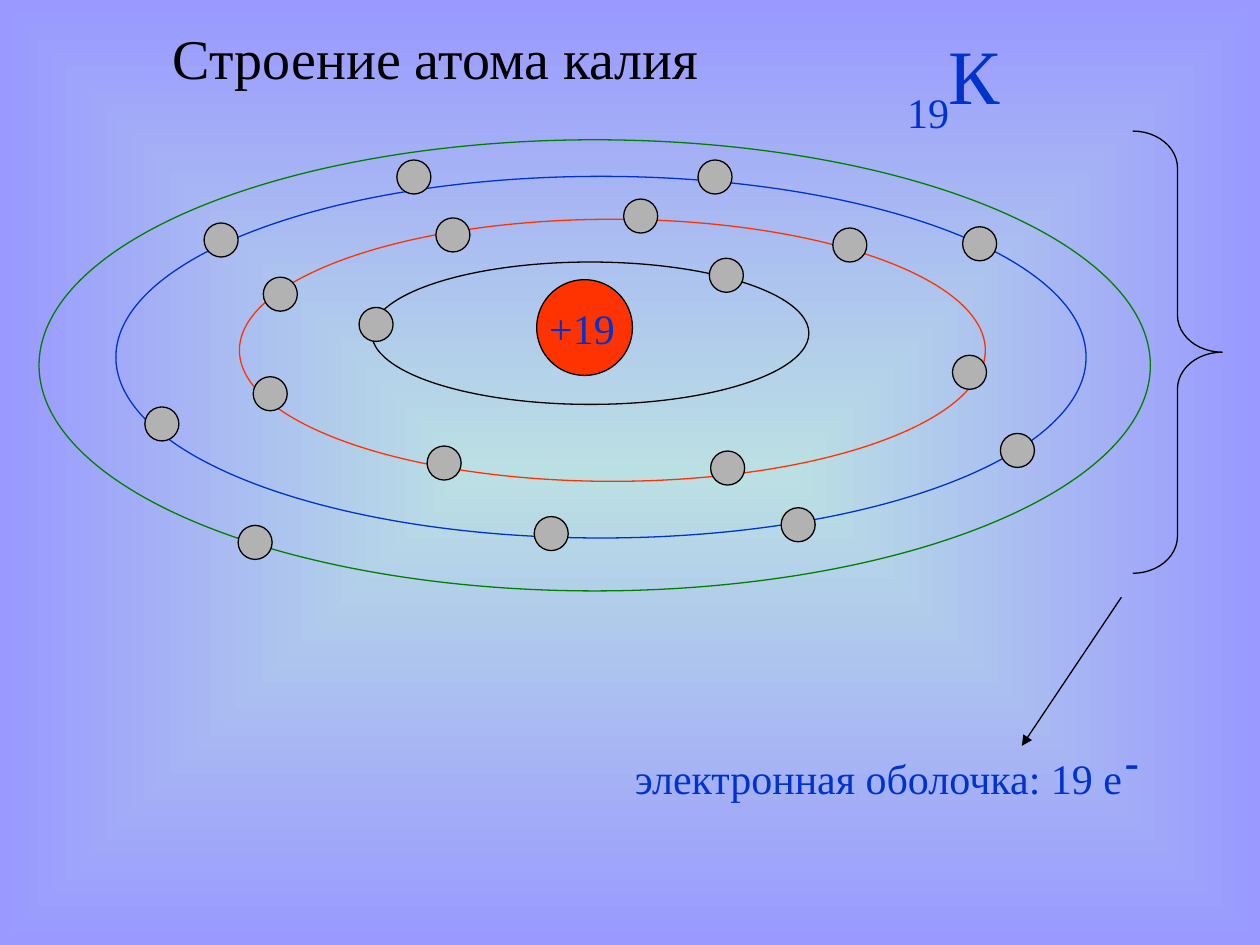
from lxml import etree
from pptx import Presentation
from pptx.dml.color import RGBColor
from pptx.enum.shapes import MSO_CONNECTOR, MSO_SHAPE
from pptx.enum.text import MSO_ANCHOR, PP_ALIGN
from pptx.oxml.ns import qn
from pptx.util import Inches, Pt

BLACK = RGBColor(0x00, 0x00, 0x00)
BLUE = RGBColor(0x00, 0x33, 0xCC)
RED = RGBColor(0xFF, 0x33, 0x00)
GREEN = RGBColor(0x00, 0x80, 0x00)
GRAY = RGBColor(0xB2, 0xB2, 0xB2)
MINT = RGBColor(0xBB, 0xE0, 0xE3)
LAVENDER = RGBColor(0x99, 0x99, 0xFF)
FONT = "Times New Roman"
LINE_WIDTH = Pt(0.75)
ELECTRON_SIZE = 0.27

deck = Presentation()
deck.slide_width, deck.slide_height = Inches(10), Inches(7.5)
page = deck.slides.add_slide(deck.slide_layouts[5])


def add_outlined(preset, left, top, width, height, line=BLACK, fill=None):
    shape = page.shapes.add_shape(
        preset, Inches(left), Inches(top), Inches(width), Inches(height))
    shape.shadow.inherit = False
    shape.line.color.rgb = line
    shape.line.width = LINE_WIDTH
    if fill is None:
        shape.fill.background()
    else:
        shape.fill.solid()
        shape.fill.fore_color.rgb = fill
    return shape


def add_label(text, left, top, width, height, size=24, bold=False):
    box = page.shapes.add_textbox(
        Inches(left), Inches(top), Inches(width), Inches(height))
    box.text_frame.word_wrap = True
    para = box.text_frame.paragraphs[0]
    para.text = text
    para.font.name, para.font.size, para.font.bold = FONT, Pt(size), bold
    para.font.color.rgb = BLUE


# Background: gradient spreading from the centre
background = page.background.fill
background.gradient()
for stop, color in zip(background.gradient_stops, (MINT, LAVENDER)):
    stop.color.rgb = color
gradient = page.element.find(".//" + qn("a:gradFill"))
gradient.remove(gradient.find(qn("a:lin")))
spread = etree.SubElement(gradient, qn("a:path"), path="shape")
etree.SubElement(spread, qn("a:fillToRect"),
                 l="50000", t="50000", r="50000", b="50000")

# Title
title = page.shapes.title
title.left, title.top = Inches(0.69), Inches(0.21)
title.width, title.height = Inches(5.54), Inches(0.49)
title.text_frame.text = "Строение атома калия"
title.text_frame.vertical_anchor = MSO_ANCHOR.MIDDLE
para = title.text_frame.paragraphs[0]
para.alignment = PP_ALIGN.CENTER
para.font.name, para.font.size = FONT, Pt(32)
para.font.color.rgb = BLACK

# Electron shells
shells = [
    (1.9, 1.74, 5.92, 2.08, RED),
    (2.95, 2.08, 3.47, 1.13, BLACK),
    (0.92, 1.4, 7.7, 2.87, BLUE),
    (0.31, 1.11, 8.82, 3.58, GREEN),
]
for shell in shells:
    add_outlined(MSO_SHAPE.OVAL, *shell)

# Electrons, shell by shell from the nucleus outwards
electrons = [
    (2.85, 2.44), (5.63, 2.05),
    (2.09, 2.2), (3.46, 1.73), (4.95, 1.58), (6.61, 1.81),
    (7.56, 2.82), (5.64, 3.58), (3.39, 3.54), (2.01, 2.99),
    (1.62, 1.77), (3.15, 1.27), (5.54, 1.27), (7.64, 1.8),
    (7.94, 3.44), (6.2, 4.03), (4.24, 4.1), (1.15, 3.23),
    (1.89, 4.17),
]
for left, top in electrons:
    add_outlined(MSO_SHAPE.OVAL, left, top, ELECTRON_SIZE, ELECTRON_SIZE,
                 fill=GRAY)

# Nucleus
add_outlined(MSO_SHAPE.OVAL, 4.26, 2.22, 0.76, 0.76, fill=RED)
add_label("+19", 4.26, 2.35, 0.75, 0.5)

# Brace and arrow to the caption
brace = add_outlined(MSO_SHAPE.RIGHT_BRACE, 8.99, 1.04, 0.71, 3.51)
brace.adjustments[0] = 0.413
arrow = page.shapes.add_connector(
    MSO_CONNECTOR.STRAIGHT,
    Inches(8.9), Inches(4.74), Inches(8.11), Inches(5.92))
arrow.line.color.rgb = BLACK
arrow.line.width = LINE_WIDTH
etree.SubElement(arrow.line._get_or_add_ln(), qn("a:tailEnd"), type="triangle")
etree.SubElement(arrow._element.spPr, qn("a:effectLst"))
add_label("электронная оболочка: 19 е", 4.94, 5.92, 4.43, 0.5)
add_label("-", 8.83, 5.79, 0.38, 0.5, bold=True)

# Element symbol with its atomic number
add_label("К", 7.43, 0.17, 0.94, 0.83, size=44)
add_label("19", 7.1, 0.64, 0.61, 0.5)

deck.save("out.pptx")
